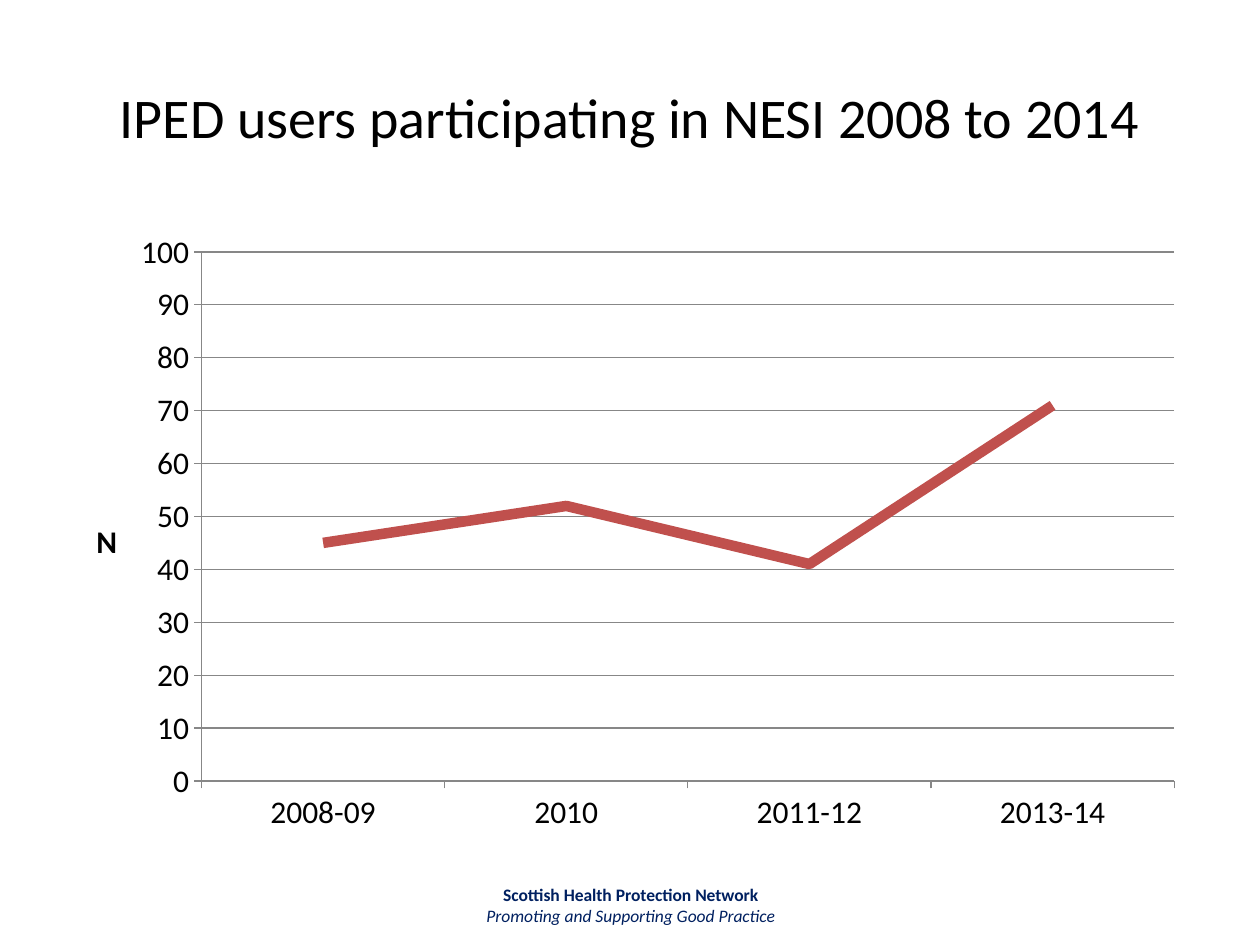
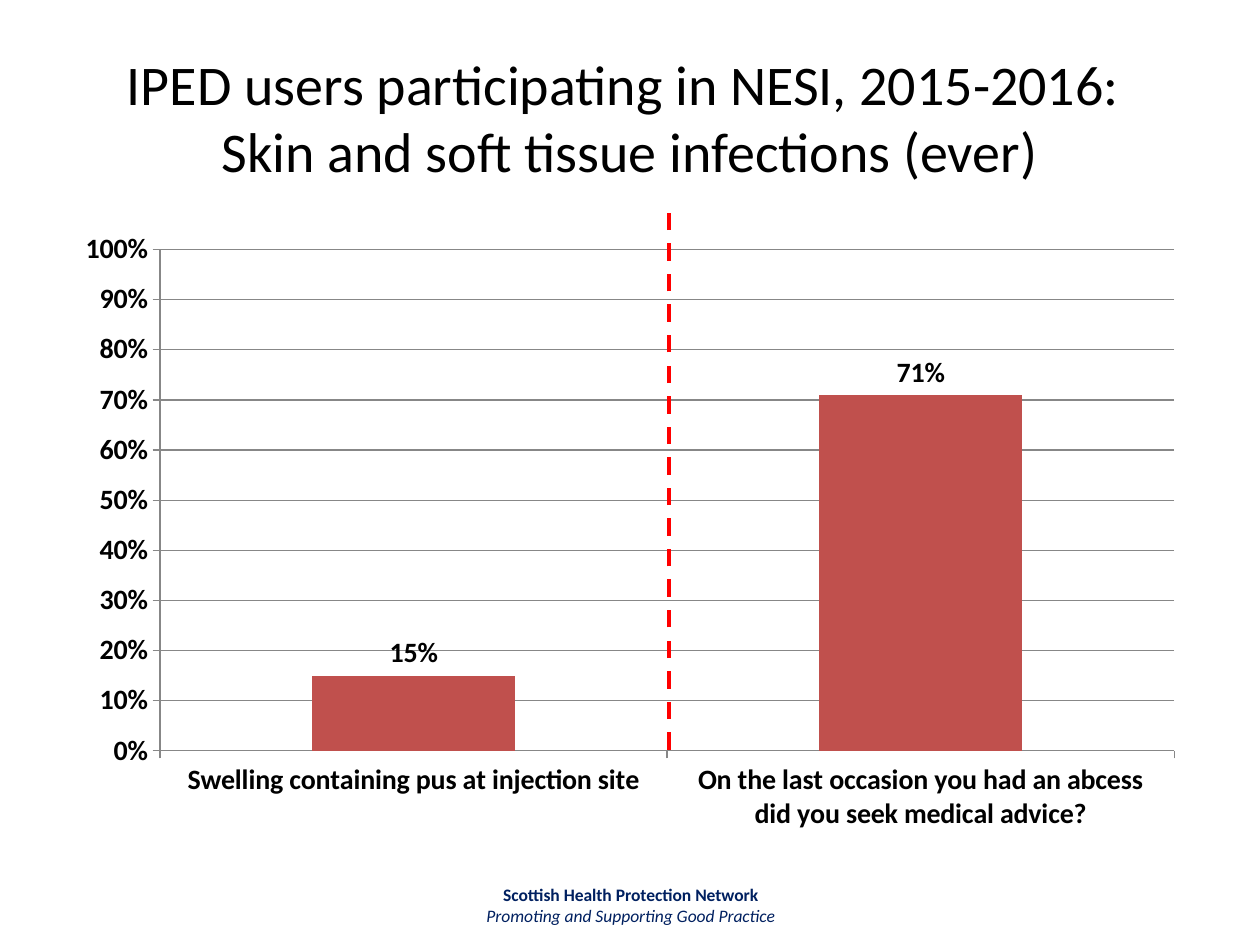
from dataclasses import dataclass

from lxml.etree import SubElement
from pptx import Presentation
from pptx.chart.data import CategoryChartData
from pptx.dml.color import RGBColor
from pptx.enum.chart import XL_CHART_TYPE, XL_LABEL_POSITION
from pptx.enum.dml import MSO_LINE
from pptx.enum.shapes import MSO_CONNECTOR
from pptx.enum.text import MSO_ANCHOR, PP_ALIGN
from pptx.oxml.ns import qn
from pptx.util import Pt

SCALE = 9144  # EMU per px, 100 px to the inch


@dataclass(frozen=True)
class Theme:
    face: str = "Calibri"
    ink: str = "000000"
    navy: str = "002060"
    brick: str = "C0504D"
    grid: str = "878787"
    red: str = "FF0000"
    title: int = 32
    foot: int = 10
    axis: int = 18
    label: int = 16


THEME = Theme()
CHART = (50, 175, 900, 495)
PERCENT = "###0%"


def px(*sizes):
    return [size * SCALE for size in sizes]


def style(font, size, color=THEME.ink, bold=False, italic=False):
    font.name, font.size = THEME.face, Pt(size)
    font.bold, font.italic = bold, italic
    font.color.rgb = RGBColor.from_string(color)


def stroke(line, color, width):
    line.color.rgb = RGBColor.from_string(color)
    line.width = Pt(width)


def add_text(slide, box, lines, anchor=MSO_ANCHOR.TOP):
    """Add centred lines, each a text with its font settings."""
    frame = slide.shapes.add_textbox(*px(*box)).text_frame
    frame.word_wrap = True
    frame.vertical_anchor = anchor
    for i, (text, look) in enumerate(lines):
        para = frame.add_paragraph() if i else frame.paragraphs[0]
        para.text = text
        para.alignment = PP_ALIGN.CENTER
        style(para.font, **look)


def add_page(deck, title):
    """Add a slide with the shared footer and title."""
    slide = deck.slides.add_slide(deck.slide_layouts[6])
    foot = dict(size=THEME.foot, color=THEME.navy)
    add_text(slide, (342, 697, 317, 40), [
        ("Scottish Health Protection Network", foot | dict(bold=True)),
        ("Promoting and Supporting Good Practice", foot | dict(italic=True)),
    ])
    add_text(slide, (50, 30, 900, 125), [(title, dict(size=THEME.title))],
             MSO_ANCHOR.MIDDLE)
    return slide


def place(node, index, **spots):
    """Fix a chart part's layout, given in px from the chart's corner."""
    for old in node.findall(qn("c:layout")):
        node.remove(old)
    layout = SubElement(node, qn("c:layout"))
    node.insert(index, layout)
    manual = SubElement(layout, qn("c:manualLayout"))
    if "w" in spots:
        SubElement(manual, qn("c:layoutTarget")).set("val", "inner")
    for key in ("x", "y"):
        SubElement(manual, qn(f"c:{key}Mode")).set("val", "edge")
    for key, spot in spots.items():
        whole = CHART[2] if key in "xw" else CHART[3]
        SubElement(manual, qn(f"c:{key}")).set("val", f"{spot / whole:.4f}")


def add_chart(slide, kind, cats, vals, top, step, size, bold, plot):
    """Add a one-series chart whose value axis runs from 0 to top."""
    data = CategoryChartData()
    data.categories = cats
    data.add_series("Series 1", vals)
    chart = slide.shapes.add_chart(kind, *px(*CHART), data).chart
    chart.has_legend = chart.has_title = False
    style(chart.font, size, bold=bold)
    axis = chart.value_axis
    axis.minimum_scale, axis.maximum_scale, axis.major_unit = 0, top, step
    for line in (axis.major_gridlines.format.line, axis.format.line,
                 chart.category_axis.format.line):
        stroke(line, THEME.grid, 0.75)
    chart.plots[0].vary_by_categories = False
    place(chart._chartSpace.chart.plotArea, 0, **plot)
    return chart


def name_axis(chart, text):
    """Set an upright title beside the value axis."""
    title = chart.value_axis.axis_title
    para = title.text_frame.paragraphs[0]
    para.text = text
    style(para.font, THEME.axis, bold=True)
    node = title._element
    body = node.find(".//" + qn("a:bodyPr"))
    body.set("rot", "0")
    body.set("vert", "horz")
    place(node, 1, x=22, y=233)


def add_labels(plot):
    plot.has_data_labels = True
    labels = plot.data_labels
    labels.show_value = True
    labels.position = XL_LABEL_POSITION.OUTSIDE_END
    labels.number_format = PERCENT
    labels.number_format_is_linked = False
    style(labels.font, THEME.label, bold=True)


def add_split(slide, x, start, end):
    """Add a dashed vertical divider."""
    line = slide.shapes.add_connector(MSO_CONNECTOR.STRAIGHT,
                                      *px(x, start, x, end))
    stroke(line.line, THEME.red, 2.5)
    line.line.dash_style = MSO_LINE.DASH
    SubElement(line._element.spPr, qn("a:effectLst"))


def add_trend(deck):
    slide = add_page(deck, "IPED users participating in NESI 2008 to 2014")
    chart = add_chart(slide, XL_CHART_TYPE.LINE,
                      ["2008-09", "2010", "2011-12", "2013-14"],
                      [45, 52, 41, 71], 100, 10, THEME.axis, False,
                      dict(x=110, y=25, w=772, h=420))
    name_axis(chart, "N")
    series = chart.plots[0].series[0]
    series.smooth = False
    stroke(series.format.line, THEME.brick, 6)


def add_share(deck):
    slide = add_page(deck, "IPED users participating in NESI, 2015-2016: \v"
                           "Skin and soft tissue infections (ever)")
    chart = add_chart(slide, XL_CHART_TYPE.COLUMN_CLUSTERED,
                      ["Swelling containing pus at injection site",
                       "On the last occasion you had an abcess "
                       "did you seek medical advice?"],
                      [0.15, 0.71], 1, 0.1, THEME.label, True,
                      dict(x=77, y=23, w=805, h=398))
    ticks = chart.value_axis.tick_labels
    ticks.number_format = PERCENT
    ticks.number_format_is_linked = False
    plot = chart.plots[0]
    plot.gap_width = 150
    fill = plot.series[0].format.fill
    fill.solid()
    fill.fore_color.rgb = RGBColor.from_string(THEME.brick)
    add_labels(plot)
    add_split(slide, 531, 595, 162)


def main():
    deck = Presentation()
    deck.slide_width, deck.slide_height = px(1000, 750)
    add_trend(deck)
    add_share(deck)
    deck.save("out.pptx")


if __name__ == "__main__":
    main()
